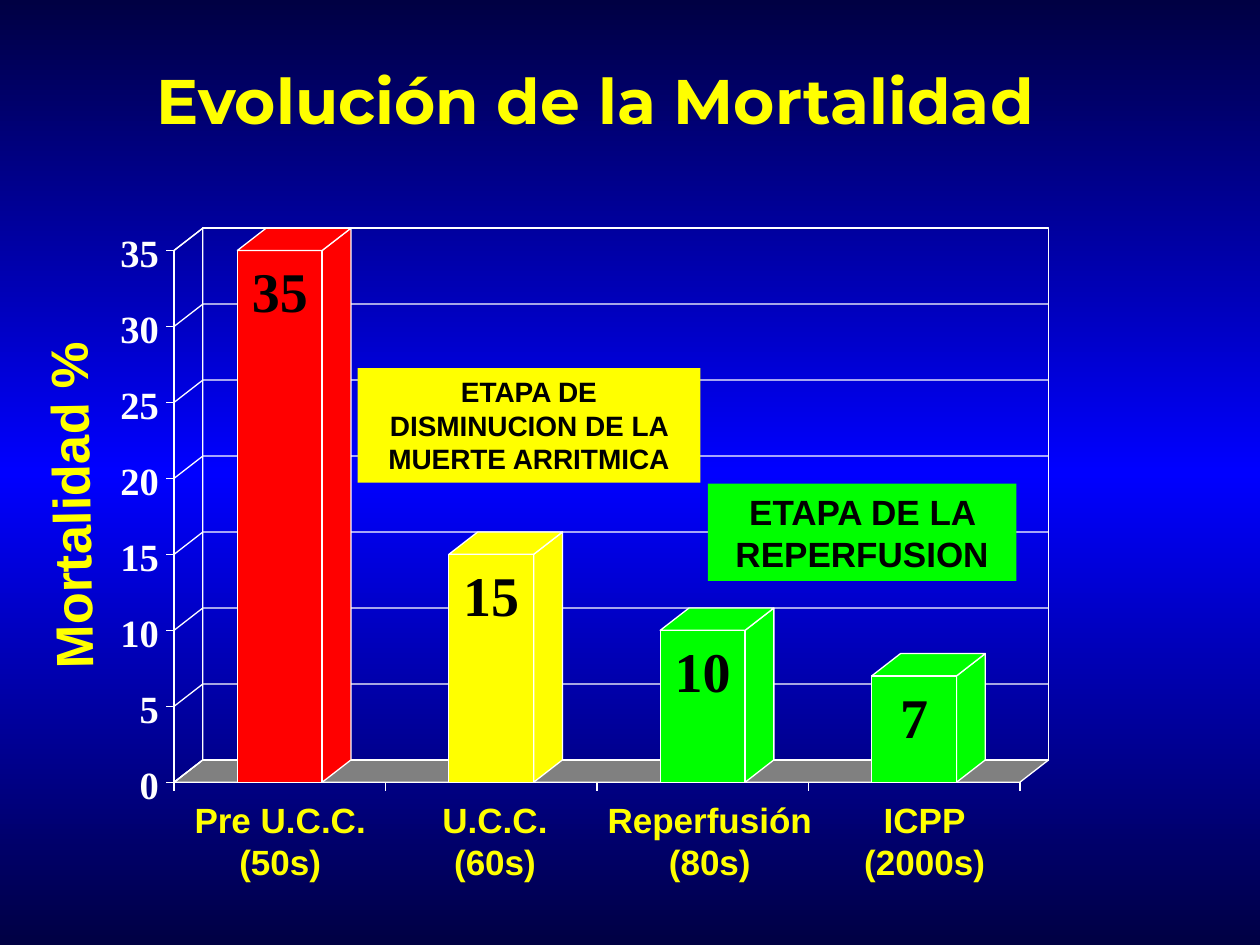
from copy import deepcopy

from lxml.etree import SubElement
from pptx import Presentation
from pptx.dml.color import RGBColor
from pptx.enum.shapes import MSO_CONNECTOR, MSO_SHAPE
from pptx.enum.text import MSO_ANCHOR, PP_ALIGN
from pptx.oxml.ns import qn
from pptx.util import Cm, Pt

NAVY = RGBColor(0x00, 0x00, 0x43)
BLUE = RGBColor(0x00, 0x00, 0xFF)
WHITE = RGBColor(0xFF, 0xFF, 0xFF)
BLACK = RGBColor(0x00, 0x00, 0x00)
GRAY = RGBColor(0x80, 0x80, 0x80)
RED = RGBColor(0xFF, 0x00, 0x00)
YELLOW = RGBColor(0xFF, 0xFF, 0x00)
GREEN = RGBColor(0x00, 0xFF, 0x00)
SANS, SERIF, DISPLAY = "Arial", "Times New Roman", "Montserrat"

# Content
TITLE = "Evolución de la Mortalidad"
AXIS_TITLE = "Mortalidad %"
STAGES = [  # treatment, decade, mortality, colour
    ("Pre U.C.C.", "(50s)", 35, RED),
    ("U.C.C.", "(60s)", 15, YELLOW),
    ("Reperfusión", "(80s)", 10, GREEN),
    ("ICPP", "(2000s)", 7, GREEN),
]
CALLOUTS = [  # text, size, colour, box in cm
    ("ETAPA DE LA REPERFUSION", 20, GREEN, (14.27, 9.75, 6.22, 1.96)),
    ("ETAPA DE DISMINUCION DE LA MUERTE ARRITMICA", 16, YELLOW,
     (7.21, 7.42, 6.91, 2.31)),
]
AXIS_MAX, AXIS_STEP = 35, 5

# Plot geometry in cm
LEFT, FLOOR, WIDTH, HEIGHT = 3.51, 15.77, 17.05, 10.72
RIGHT, TOP = LEFT + WIDTH, FLOOR - HEIGHT
DEPTH_X, DEPTH_Y = 0.58, 0.45
TICK = 0.17
STAGE_WIDTH = WIDTH / len(STAGES)
BAR_WIDTH = 1.71
LABEL_CENTER, LABEL_STEP, LABEL_WIDTH = 5.65, 4.33, 4.3

prs = Presentation()
prs.slide_width, prs.slide_height = Cm(25.4), Cm(19.05)
slide = prs.slides.add_slide(prs.slide_layouts[6])
shapes = slide.shapes


def paint_background():
    """Vertical gradient: dark edges, bright middle."""
    fill = slide.background.fill
    fill.gradient()
    fill.gradient_angle = 90
    stop_list = slide.element.find(".//" + qn("a:gsLst"))
    stop_list.append(deepcopy(stop_list[-1]))
    for stop, color, position in zip(fill.gradient_stops, (NAVY, BLUE, NAVY), (0, 0.5, 1)):
        stop.color.rgb = color
        stop.position = position


def style(shape, fill=None, line=None):
    shape.shadow.inherit = False
    if fill is None:
        shape.fill.background()
    else:
        shape.fill.solid()
        shape.fill.fore_color.rgb = fill
    if line is None:
        shape.line.fill.background()
    else:
        shape.line.color.rgb = line
        shape.line.width = Pt(0.75)


def write(shape, lines, size, color, font=SANS, align=PP_ALIGN.CENTER, margins=(0, 0)):
    """Bold text; margins are (side, top and bottom) in cm."""
    frame = shape.text_frame
    frame.word_wrap = True
    frame.vertical_anchor = MSO_ANCHOR.TOP
    frame.margin_left = frame.margin_right = Cm(margins[0])
    frame.margin_top = frame.margin_bottom = Cm(margins[1])
    for index, line in enumerate(lines):
        paragraph = frame.add_paragraph() if index else frame.paragraphs[0]
        paragraph.alignment = align
        run = paragraph.add_run()
        run.text = line
        run.font.size, run.font.bold, run.font.name = Pt(size), True, font
        run.font.color.rgb = color


def add_box(box, fill=None, line=None):
    rectangle = shapes.add_shape(MSO_SHAPE.RECTANGLE, *map(Cm, box))
    style(rectangle, fill, line)
    return rectangle


def add_label(box, *text, **options):
    label = shapes.add_textbox(*map(Cm, box))
    write(label, *text, **options)
    return label


def add_outline(points, fill=None, line=WHITE, close=True):
    corners = [(Cm(x), Cm(y)) for x, y in points]
    builder = shapes.build_freeform(*corners[0], scale=1.0)
    builder.add_line_segments(corners[1:], close=close)
    style(builder.convert_to_shape(), fill, line)


def add_line(x1, y1, x2, y2):
    line = shapes.add_connector(MSO_CONNECTOR.STRAIGHT, *map(Cm, (x1, y1, x2, y2)))
    line.line.color.rgb = WHITE
    line.line.width = Pt(0.75)
    SubElement(line.element.spPr, qn("a:effectLst"))


def add_top_face(left, right, y, **options):
    """Parallelogram that recedes from the front edge at height y."""
    add_outline([(left, y), (left + DEPTH_X, y - DEPTH_Y),
                 (right + DEPTH_X, y - DEPTH_Y), (right, y)], **options)


def add_side_face(x, top, **options):
    add_outline([(x, FLOOR), (x, top), (x + DEPTH_X, top - DEPTH_Y),
                 (x + DEPTH_X, FLOOR - DEPTH_Y)], **options)


def height_of(value):
    return FLOOR - HEIGHT * value / AXIS_MAX


def draw_walls():
    add_top_face(LEFT, RIGHT, FLOOR, fill=GRAY)
    for value in axis_values:
        y = height_of(value)
        add_outline([(LEFT, y), (LEFT + DEPTH_X, y - DEPTH_Y),
                     (RIGHT + DEPTH_X, y - DEPTH_Y)], close=False)
    add_side_face(LEFT, TOP)
    add_box((LEFT + DEPTH_X, TOP - DEPTH_Y, WIDTH, HEIGHT), line=WHITE)


def draw_bars():
    for index, (_, _, mortality, color) in enumerate(STAGES):
        left = LEFT + index * STAGE_WIDTH + (STAGE_WIDTH - BAR_WIDTH) / 2
        right, top = left + BAR_WIDTH, height_of(mortality)
        add_side_face(right, top, fill=color)
        front = add_box((left, top, BAR_WIDTH, FLOOR - top), color, WHITE)
        write(front, [str(mortality)], 32, BLACK, SERIF, margins=(0, 0.13))
        add_top_face(left, right, top, fill=color)


def draw_axes():
    add_line(LEFT, FLOOR, LEFT, TOP)
    for value in axis_values:
        y = height_of(value)
        add_line(LEFT, y, LEFT - TICK, y)
        add_label((2, y - 0.43, 1.2, 1.04), [str(value)], 22, WHITE,
                  font=SERIF, align=PP_ALIGN.RIGHT)
    add_line(LEFT, FLOOR, RIGHT, FLOOR)
    for index in range(len(STAGES) + 1):
        x = LEFT + index * STAGE_WIDTH
        add_line(x, FLOOR, x, FLOOR + TICK)
    for index, (treatment, decade, _, _) in enumerate(STAGES):
        left = LABEL_CENTER + index * LABEL_STEP - LABEL_WIDTH / 2
        add_label((left, 16.1, LABEL_WIDTH, 1.7), [treatment, decade], 20, YELLOW)
    axis_title = add_label((-2.1, 9.55, 7, 1.27), [AXIS_TITLE], 30, YELLOW)
    axis_title.rotation = 269


axis_values = range(0, AXIS_MAX + 1, AXIS_STEP)
paint_background()
draw_walls()
draw_bars()
draw_axes()
add_label((2.9, 1.12, 19.13, 1.8), [TITLE], 36, YELLOW, font=DISPLAY,
          align=PP_ALIGN.LEFT, margins=(0.25, 0.13))
for text, size, color, box in CALLOUTS:
    write(add_box(box, color), [text], size, BLACK, margins=(0.25, 0.13))

prs.save("out.pptx")
